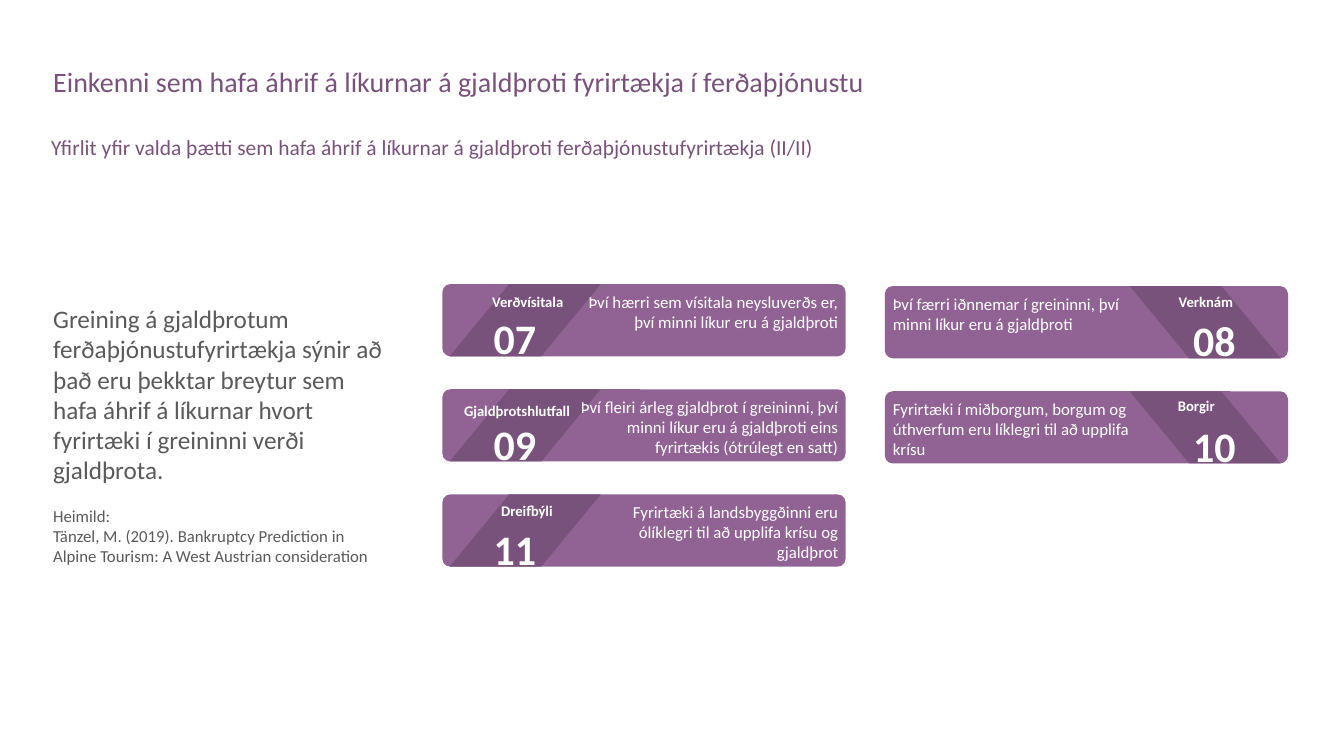
from pptx import Presentation
from pptx import util as u
from pptx.dml.color import RGBColor
from pptx.enum import shapes, text

FONT = "Calibri"
PURPLE, DARK, GREY, WHITE = "916395", "79527B", "595A59", "FFFFFF"

TITLE = "Einkenni sem hafa áhrif á líkurnar á gjaldþroti fyrirtækja í ferðaþjónustu"
SUBTITLE = ("Yfirlit yfir valda þætti sem hafa áhrif á líkurnar á gjaldþroti "
            "ferðaþjónustufyrirtækja (II/II)")
# Text, size, space before
SUMMARY = [
    ("Greining á gjaldþrotum ferðaþjónustufyrirtækja sýnir að það eru þekktar breytur "
     "sem hafa áhrif á líkurnar hvort fyrirtæki í greininni verði gjaldþrota.", 18, 0),
    ("Heimild:", 12, 14.6),
    ("Tänzel, M. (2019). Bankruptcy Prediction in Alpine Tourism: "
     "A West Austrian consideration", 12, 0),
]
# Number, label, label centre and top within the card, description, its width
CARDS = [
    ("07", "Verðvísitala", 2.15, 0.08,
     "Því hærri sem vísitala neysluverðs er, því minni líkur eru á gjaldþroti", 6.91),
    ("08", "Verknám", 8.09, 0.03,
     "Því færri iðnnemar í greininni, því minni líkur eru á gjaldþroti", 7.11),
    ("09", "Gjaldþrotshlutfall", 1.88, 0.18,
     "Því fleiri árleg gjaldþrot í greininni, því minni líkur eru á gjaldþroti eins "
     "fyrirtækis (ótrúlegt en satt)", 7.26),
    ("10", "Borgir", 7.85, 0,
     "Fyrirtæki í miðborgum, borgum og úthverfum eru líklegri til að upplifa krísu", 7.11),
    ("11", "Dreifbýli", 2.13, 0.05,
     "Fyrirtæki á landsbyggðinni eru ólíklegri til að upplifa krísu og gjaldþrot", 6.91),
]

# Card grid, in cm
COLUMNS = [(11.15, 7.16), (22.3, 7.21)]
ROW_PITCH = 2.65
CARD_W, CARD_H, CORNER = 10.16, 1.82, 0.2
BAND_INSET, BAND_W, BAND_SLANT = 0.18, 3.81, 1.5
LABEL_W = 3.4
LEFT, CENTER, RIGHT = text.PP_ALIGN.LEFT, text.PP_ALIGN.CENTER, text.PP_ALIGN.RIGHT
TOP, MIDDLE = text.MSO_ANCHOR.TOP, text.MSO_ANCHOR.MIDDLE


def color(value):
    return RGBColor.from_string(value)


def paint(shape, fill):
    shape.shadow.inherit = False
    shape.fill.solid()
    shape.fill.fore_color.rgb = color(fill)
    shape.line.fill.background()


def place(shape, left, top, width, height):
    shape.left, shape.top = u.Cm(left), u.Cm(top)
    shape.width, shape.height = u.Cm(width), u.Cm(height)


def write(shape, paragraphs, fill, align=LEFT, anchor=TOP, bold=False, spacing=1.0, inset=True):
    frame = shape.text_frame
    frame.word_wrap = True
    frame.auto_size = text.MSO_AUTO_SIZE.NONE
    frame.vertical_anchor = anchor
    frame.margin_left = frame.margin_right = u.Cm(0.25 if inset else 0)
    frame.margin_top = frame.margin_bottom = u.Cm(0.13 if inset else 0)
    for index, (words, size, before) in enumerate(paragraphs):
        paragraph = frame.add_paragraph() if index else frame.paragraphs[0]
        paragraph.text = words
        paragraph.alignment = align
        paragraph.line_spacing = spacing
        paragraph.space_before = u.Pt(before)
        font = paragraph.font
        font.name, font.size, font.bold = FONT, u.Pt(size), bold
        font.color.rgb = color(fill)


def add_text(slide, box, paragraphs, fill, **style):
    write(slide.shapes.add_textbox(*map(u.Cm, box)), paragraphs, fill, **style)


def add_card(slide, index, number, label, label_center, label_top, description, width):
    row, column = divmod(index, 2)
    left, top = COLUMNS[column]
    top += row * ROW_PITCH
    mirrored = column == 1

    # Rounded background
    card = slide.shapes.add_shape(shapes.MSO_SHAPE.ROUNDED_RECTANGLE,
                                  *map(u.Cm, (left, top, CARD_W, CARD_H)))
    card.adjustments[0] = CORNER / CARD_H
    paint(card, PURPLE)

    # Slanted band, mirrored in the right column
    corners = [(BAND_INSET + BAND_W, 0), (BAND_INSET + BAND_SLANT, 0),
               (BAND_INSET, CARD_H), (BAND_INSET + BAND_W - BAND_SLANT, CARD_H)]
    points = [(u.Cm(left + (CARD_W - x if mirrored else x)), u.Cm(top + y))
              for x, y in corners]
    builder = slide.shapes.build_freeform(*points[0])
    builder.add_line_segments(points[1:], close=True)
    paint(builder.convert_to_shape(), DARK)

    # Label, number and description
    add_text(slide, (left + label_center - LABEL_W / 2, top + label_top, LABEL_W, 0.71),
             [(label, 10.5, 0)], WHITE, align=CENTER, bold=True)
    add_text(slide, (left + (7.72 if mirrored else 1.24), top + 0.71, 1.17, 1.3),
             [(number, 30, 0)], WHITE, align=CENTER, anchor=MIDDLE, bold=True, inset=False)
    text_left = left - 0.05 if mirrored else left + CARD_W + 0.07 - width
    add_text(slide, (text_left, top + 0.05, width, 1.8), [(description, 12, 0)], WHITE,
             align=LEFT if mirrored else RIGHT)


def main():
    presentation = Presentation()
    presentation.slide_width, presentation.slide_height = u.Cm(33.87), u.Cm(19.05)
    slide = presentation.slides.add_slide(presentation.slide_layouts[5])

    # Headings and summary
    title = slide.shapes.title
    place(title, 1.09, 1.6, 31.85, 1.63)
    write(title, [(TITLE, 20, 0)], DARK, spacing=0.9)
    add_text(slide, (1.04, 3.43, 31.9, 0.71), [(SUBTITLE, 15.3, 0)], DARK, spacing=0.7)
    add_text(slide, (1.09, 4.55, 8.86, 12.8), SUMMARY, GREY, anchor=MIDDLE)

    # Cards
    for index, card in enumerate(CARDS):
        add_card(slide, index, *card)
    presentation.save("out.pptx")


if __name__ == "__main__":
    main()
